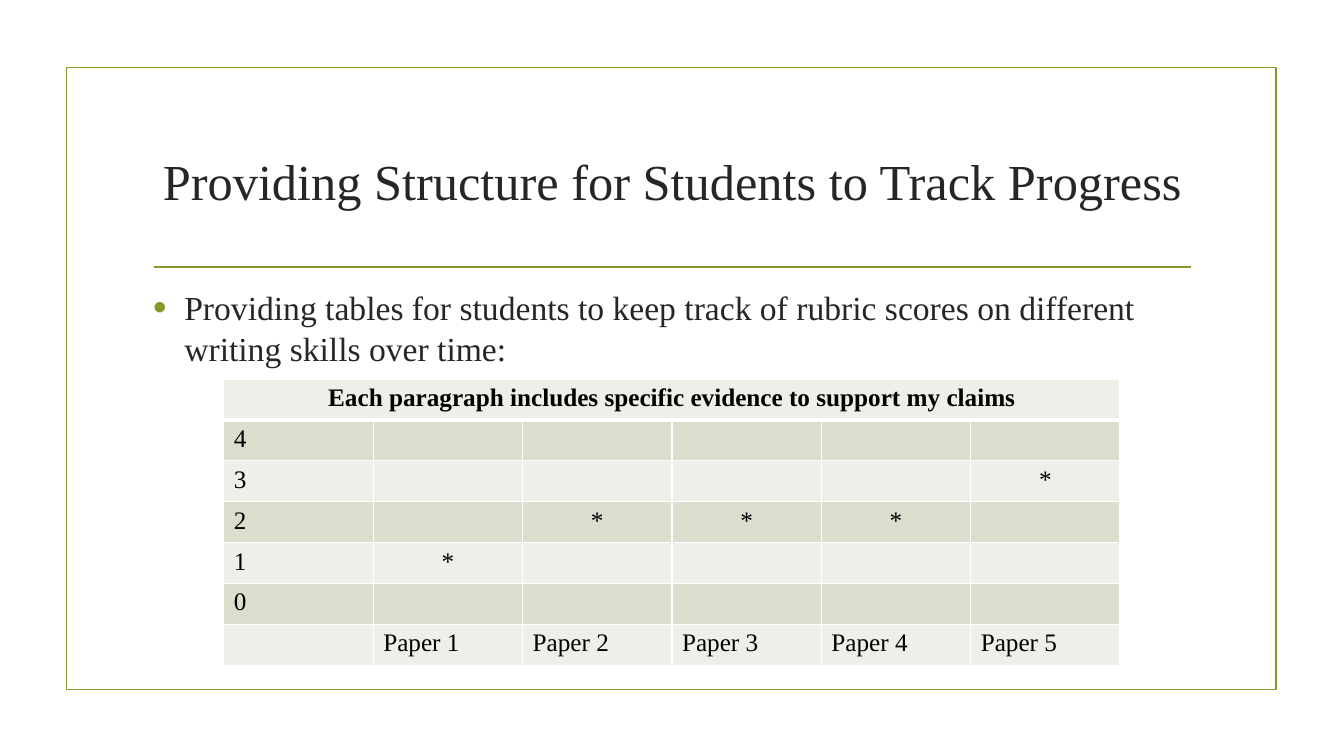
from lxml.etree import SubElement
from pptx import Presentation
from pptx.dml.color import RGBColor
from pptx.enum.shapes import MSO_CONNECTOR, MSO_SHAPE
from pptx.enum.text import MSO_ANCHOR, MSO_AUTO_SIZE, PP_ALIGN
from pptx.oxml.ns import qn
from pptx.util import Inches, Pt

COLORS = {"accent": "83992A", "text": "262626", "cell_text": "000000",
          "light": "EDEFE8", "dark": "D9DECD", "border": "FFFFFF"}
FONT = "Times New Roman"
PAPERS = 5
SCORES = [4, 3, 2, 1, 0]
PAPER_SCORES = [1, 2, 2, 2, 3]


def rgb(name):
    return RGBColor.from_string(COLORS[name])


def write(tf, text, size=18, color="cell_text", bold=False, align=PP_ALIGN.LEFT):
    p = tf.paragraphs[0]
    p.alignment = align
    r = p.add_run()
    r.text = text
    r.font.name = FONT
    r.font.size = Pt(size)
    r.font.bold = bold
    r.font.color.rgb = rgb(color)
    return p


def add_bullet(p, indent):
    pPr = p._p.get_or_add_pPr()
    pPr.set("marL", str(indent))
    pPr.set("indent", str(-indent))
    color = SubElement(pPr, qn("a:buClr"))
    SubElement(color, qn("a:srgbClr"), val=COLORS["accent"])
    SubElement(pPr, qn("a:buSzPct"), val="115000")
    SubElement(pPr, qn("a:buFont"), typeface="Arial")
    SubElement(pPr, qn("a:buChar"), char="•")


def set_borders(cell, bottom=1):
    tcPr = cell._tc.get_or_add_tcPr()
    widths = {"a:lnL": 1, "a:lnR": 1, "a:lnT": 1, "a:lnB": bottom}
    for i, (tag, width) in enumerate(widths.items()):
        ln = tcPr.makeelement(qn(tag), {"w": str(Pt(width))})
        fill = SubElement(ln, qn("a:solidFill"))
        SubElement(fill, qn("a:srgbClr"), val=COLORS["border"])
        tcPr.insert(i, ln)


def add_frame(s, x, y, w, h):
    # Outline around the slide and the rule below the title
    sp = s.shapes.add_shape(MSO_SHAPE.RECTANGLE, Inches(x), Inches(y), Inches(w), Inches(h))
    sp.shadow.inherit = False
    sp.fill.background()
    rule = s.shapes.add_connector(MSO_CONNECTOR.STRAIGHT, Inches(x + 0.87), Inches(y + 1.98),
                                  Inches(x + 11.15), Inches(y + 1.98))
    SubElement(rule._element.spPr, qn("a:effectLst"))
    for item in (sp, rule):
        item.line.color.rgb = rgb("accent")
        item.line.width = Pt(1.25)


def add_title(s, x, y, w, h):
    sp = s.shapes.title
    sp.left, sp.top, sp.width, sp.height = (Inches(v) for v in (x, y, w, h))
    tf = sp.text_frame
    tf.word_wrap = True
    tf.auto_size = MSO_AUTO_SIZE.NONE
    tf.vertical_anchor = MSO_ANCHOR.MIDDLE
    write(tf, "Providing Structure for Students to Track Progress",
          size=36, color="text", align=PP_ALIGN.CENTER)


def add_body(s, x, y, w, h):
    tf = s.shapes.add_textbox(Inches(x), Inches(y), Inches(w), Inches(h)).text_frame
    tf.word_wrap = True
    p = write(tf, "Providing tables for students to keep track of rubric scores "
              "on different writing skills over time:", size=24, color="text")
    p.space_after = Pt(6)
    add_bullet(p, Inches(0.31))


def add_score_table(s, x, y, w, h):
    rows = [["Each paragraph includes specific evidence to support my claims"] + [""] * PAPERS]
    rows += [[str(score)] + ["*" if score == got else "" for got in PAPER_SCORES]
             for score in SCORES]
    rows.append([""] + [f"Paper {n}" for n in range(1, PAPERS + 1)])
    table = s.shapes.add_table(len(rows), PAPERS + 1, Inches(x), Inches(y),
                               Inches(w), Inches(h)).table

    for i, row in enumerate(rows):
        for j, text in enumerate(row):
            cell = table.cell(i, j)
            cell.fill.solid()
            cell.fill.fore_color.rgb = rgb("dark" if i % 2 else "light")
            set_borders(cell, bottom=3 if i == 0 else 1)
            if text:
                centered = i == 0 or text == "*"
                write(cell.text_frame, text, bold=i == 0,
                      align=PP_ALIGN.CENTER if centered else PP_ALIGN.LEFT)
    table.cell(0, 0).merge(table.cell(0, PAPERS))


def main():
    prs = Presentation()
    prs.slide_width, prs.slide_height = Inches(13.33), Inches(7.5)
    s = prs.slides.add_slide(prs.slide_layouts[5])
    add_frame(s, 0.66, 0.67, 12, 6.17)
    add_title(s, 1.42, 1.07, 10.5, 1.43)
    add_body(s, 1.42, 2.8, 10.5, 0.94)
    add_score_table(s, 2.22, 3.76, 8.89, 2.84)
    prs.save("out.pptx")


if __name__ == "__main__":
    main()
